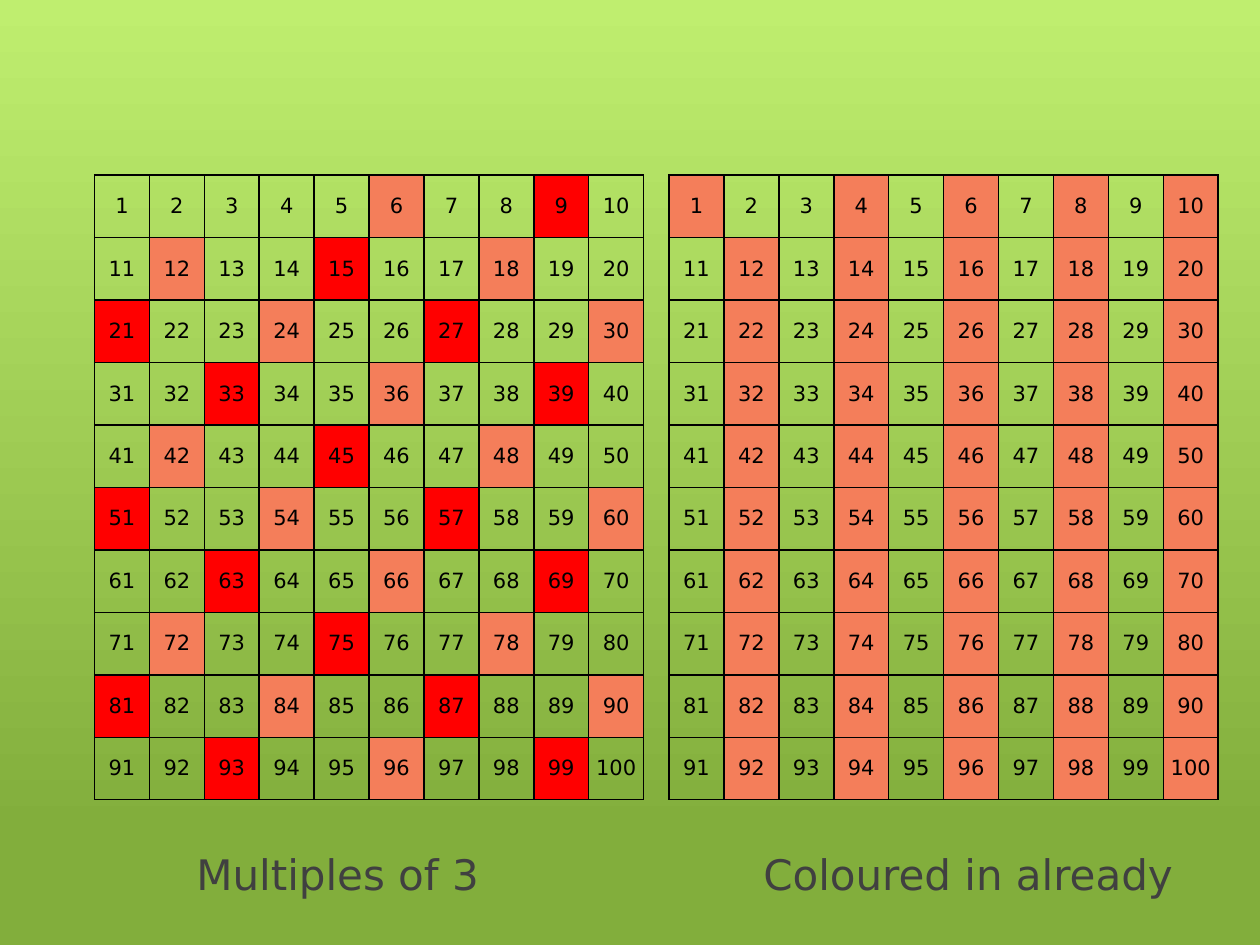
"""Build a slide with two coloured hundred squares and their captions."""
import lxml.etree
import pptx
import pptx.dml.color
import pptx.enum.text
import pptx.oxml.ns
import pptx.util

Inches = pptx.util.Inches
FONT = "DejaVu Sans"
ORANGE, RED = "F47E5A", "FF0000"
SIZE = 10


def rgb(hex_colour):
    """Turn a hex string into a colour."""
    return pptx.dml.color.RGBColor.from_string(hex_colour)


def add_run(paragraph, text, points, colour):
    """Add one run of styled text."""
    run = paragraph.add_run()
    run.text = text
    run.font.name = FONT
    run.font.size = pptx.util.Pt(points)
    run.font.color.rgb = rgb(colour)


def add_child(parent, tag, **attributes):
    """Append a DrawingML element."""
    return lxml.etree.SubElement(parent, pptx.oxml.ns.qn(tag), attributes)


def set_background(slide, top, bottom):
    """Fill the slide with a vertical gradient."""
    fill = slide.background.fill
    fill.gradient()
    fill.gradient_angle = 270
    for stop, colour, position in zip(fill.gradient_stops, (top, bottom), (0, 0.88)):
        stop.color.rgb = rgb(colour)
        stop.position = position


def set_borders(cell, colour, points):
    """Draw a line on each side of a cell."""
    properties = cell._tc.get_or_add_tcPr()
    for side in ("a:lnL", "a:lnR", "a:lnT", "a:lnB"):
        line = add_child(properties, side, w=str(pptx.util.Pt(points)))
        add_child(add_child(line, "a:solidFill"), "a:srgbClr", val=colour)


def fill_cell(cell, number, colour):
    """Write a number in a cell and colour it if a colour is given."""
    cell.vertical_anchor = pptx.enum.text.MSO_ANCHOR.MIDDLE
    if number == SIZE * SIZE:
        cell.margin_left = cell.margin_right = Inches(0.04)
    paragraph = cell.text_frame.paragraphs[0]
    paragraph.alignment = pptx.enum.text.PP_ALIGN.CENTER
    add_run(paragraph, str(number), 12, "000000")
    set_borders(cell, "000000", 1)
    if colour:
        cell.fill.solid()
        cell.fill.fore_color.rgb = rgb(colour)
    else:
        cell.fill.background()


def add_hundred_square(slide, left, colour_of):
    """Add a table of 1 to 100, coloured by a rule."""
    square = slide.shapes.add_table(
        SIZE, SIZE, Inches(left), Inches(1.39), Inches(4.36), Inches(4.96)).table
    square.first_row = square.horz_banding = False
    for number, cell in enumerate(square.iter_cells(), start=1):
        fill_cell(cell, number, colour_of(number))


def multiple_of_three_colour(number):
    """Colour multiples of 3 above 3: even orange, odd red."""
    if number == 3 or number % 3:
        return None
    return RED if number % 2 else ORANGE


def already_coloured(number):
    """Colour 1 and the even numbers above 2."""
    return ORANGE if number == 1 or (number > 2 and number % 2 == 0) else None


def add_captions(slide, first, second):
    """Add both captions on one line, set apart by a tab stop."""
    captions = slide.shapes.add_textbox(
        Inches(1.46), Inches(6.43), Inches(8.19), Inches(1.01)).text_frame
    captions.word_wrap = True
    captions.vertical_anchor = pptx.enum.text.MSO_ANCHOR.MIDDLE
    paragraph = captions.paragraphs[0]
    stops = add_child(paragraph._p.get_or_add_pPr(), "a:tabLst")
    add_child(stops, "a:tab", pos=str(Inches(4.5)), algn="l")
    add_run(paragraph, f"{first}\t{second}", 24, "404040")


def main():
    """Build and save the slide."""
    deck = pptx.Presentation()
    deck.slide_width, deck.slide_height = Inches(10), Inches(7.5)
    slide = deck.slides.add_slide(deck.slide_layouts[6])
    set_background(slide, "BFEE6F", "82AE3C")
    add_captions(slide, "Multiples of 3", "Coloured in already")
    add_hundred_square(slide, 0.75, multiple_of_three_colour)
    add_hundred_square(slide, 5.31, already_coloured)
    deck.save("out.pptx")


if __name__ == "__main__":
    main()
